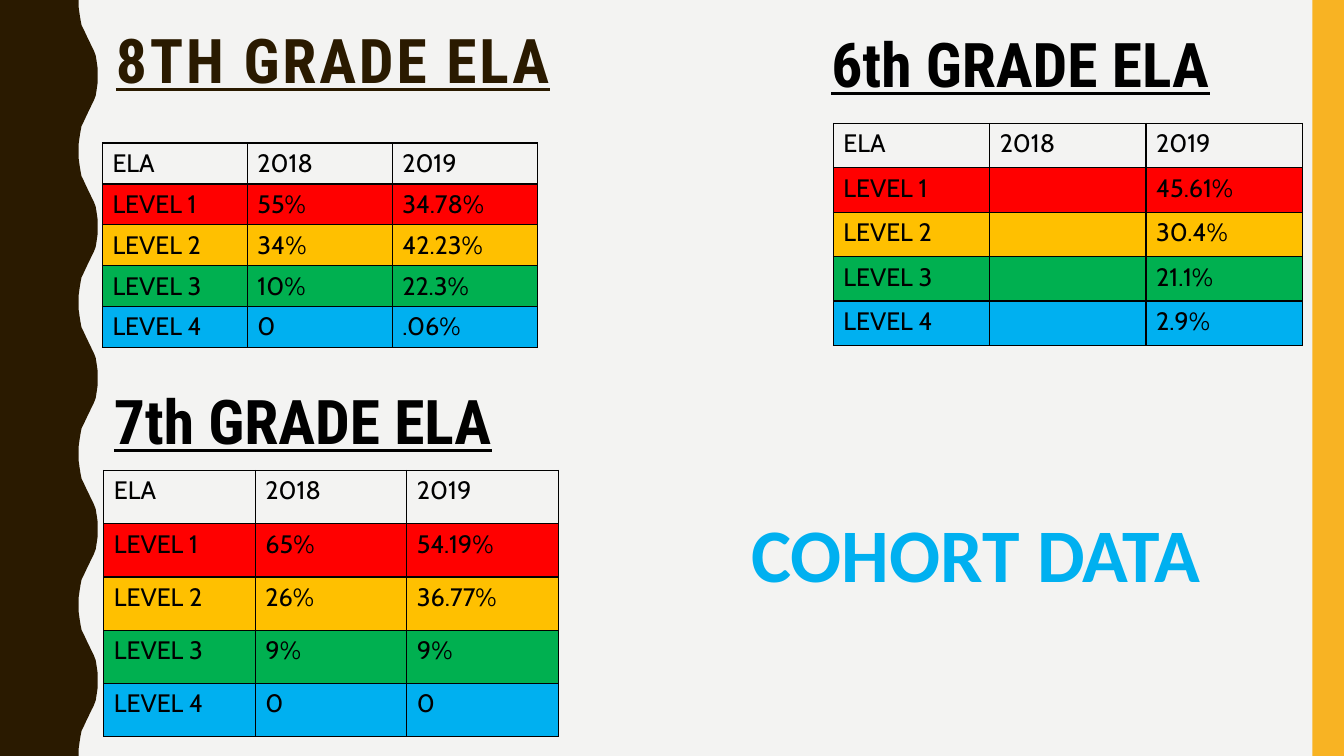
from lxml.etree import SubElement
from pptx import Presentation
from pptx.dml.color import RGBColor
from pptx.enum.shapes import MSO_SHAPE as Shape
from pptx.enum.text import MSO_ANCHOR as Anchor, MSO_AUTO_SIZE as AutoSize, PP_ALIGN as Align
from pptx.oxml.ns import qn
from pptx.util import Pt

PAPER = RGBColor(0xF3, 0xF3, 0xF2)
BROWN = RGBColor(0x2A, 0x1A, 0x00)
GOLD = RGBColor(0xF8, 0xB3, 0x23)
BLACK = RGBColor(0x00, 0x00, 0x00)
RED = RGBColor(0xFF, 0x00, 0x00)
AMBER = RGBColor(0xFF, 0xC0, 0x00)
GREEN = RGBColor(0x00, 0xB0, 0x50)
BLUE = RGBColor(0x00, 0xB0, 0xF0)

LEVEL_COLORS = [RED, AMBER, GREEN, BLUE]
HEADING_FONT = "Roboto Condensed"
WAVE_PERIOD = 108
HALF_WAVE = [(56.2, 0), (56.2, 5), (56.9, 10), (57.6, 14.4), (58.3, 18),
             (59.8, 21), (61.2, 24), (62.6, 27), (64.1, 30), (65.5, 33),
             (67, 36), (68.4, 39.6), (69.1, 44), (69.8, 49), (69.8, 54)]


def points(box):
    """Turn a box of numbers into lengths in points."""
    return [Pt(value) for value in box]


def paint(shape, color):
    """Give a shape a plain fill without outline or shadow."""
    shape.shadow.inherit = False
    shape.fill.solid()
    shape.fill.fore_color.rgb = color
    shape.line.fill.background()


def add_wavy_edge(slide, box):
    """Draw the dark band whose right side repeats one wave down the box."""
    left, top, width, height = box
    falling = [(x, WAVE_PERIOD - y) for x, y in reversed(HALF_WAVE[1:-1])]
    wave = HALF_WAVE + falling
    crest = HALF_WAVE[-1][0]
    outline = [(left + x * width / crest, top + period * WAVE_PERIOD + y)
               for period in range(round(height / WAVE_PERIOD)) for x, y in wave]
    outline += [(left + HALF_WAVE[0][0] * width / crest, top + height), (left, top + height)]
    builder = slide.shapes.build_freeform(Pt(left), Pt(top))
    builder.add_line_segments([(Pt(x), Pt(y)) for x, y in outline])
    paint(builder.convert_to_shape(), BROWN)


def add_side_bar(slide, box):
    """Draw the gold bar that fills the box."""
    paint(slide.shapes.add_shape(Shape.RECTANGLE, *points(box)), GOLD)


def write_line(frame, text, font_name, size, color, underline=False):
    """Write one bold line at the top of a text frame."""
    frame.word_wrap = True
    frame.auto_size = AutoSize.NONE
    frame.vertical_anchor = Anchor.TOP
    frame.text = text
    font = frame.paragraphs[0].runs[0].font
    font.name, font.size, font.bold = font_name, Pt(size), True
    font.underline = underline
    font.color.rgb = color


def add_title(slide, box, text):
    """Place the spaced title in the title placeholder."""
    title = slide.shapes.title
    title.left, title.top, title.width, title.height = points(box)
    write_line(title.text_frame, text, HEADING_FONT, 44, BROWN, True)
    heading = title.text_frame.paragraphs[0]
    heading.alignment = Align.LEFT
    heading.line_spacing = 0.9
    heading.runs[0].font._element.set("spc", "200")


def add_grade_heading(slide, box, text):
    """Place an underlined grade heading."""
    heading = slide.shapes.add_textbox(*points(box))
    write_line(heading.text_frame, text, HEADING_FONT, 44, BLACK, True)


def add_cohort_label(slide, box, text):
    """Place the large centred label."""
    label = slide.shapes.add_textbox(*points(box))
    write_line(label.text_frame, text, "Calibri", 54, BLUE)
    label.text_frame.paragraphs[0].alignment = Align.CENTER


def add_borders(cell):
    """Outline a cell with thin black lines."""
    properties = cell._tc.get_or_add_tcPr()
    for side in ("a:lnL", "a:lnR", "a:lnT", "a:lnB"):
        border = SubElement(properties, qn(side), w=str(Pt(1)))
        fill = SubElement(border, qn("a:solidFill"))
        SubElement(fill, qn("a:srgbClr"), val=str(BLACK))


def add_level_table(slide, box, scores):
    """Fill the box with a table of scores by level and year."""
    rows = [("ELA", "2018", "2019")]
    rows += [(f"LEVEL {level}", *pair) for level, pair in enumerate(scores, 1)]
    table = slide.shapes.add_table(len(rows), len(rows[0]), *points(box)).table
    table.first_row = table.horz_banding = False
    for column in table.columns:
        column.width = Pt(box[2] / len(rows[0]))
    for row in table.rows:
        row.height = Pt(box[3] / len(rows))
    for row_index, row in enumerate(rows):
        for column_index, text in enumerate(row):
            cell = table.cell(row_index, column_index)
            add_borders(cell)
            if row_index:
                cell.fill.solid()
                cell.fill.fore_color.rgb = LEVEL_COLORS[row_index - 1]
            else:
                cell.fill.background()
            cell.text = text
            font = cell.text_frame.paragraphs[0].font
            font.name, font.size = "Cabin", Pt(18)
            font.color.rgb = BLACK
            for run in cell.text_frame.paragraphs[0].runs:
                run.font.name, run.font.size = "Cabin", Pt(18)
                run.font.color.rgb = BLACK


def main():
    """Build the cohort slide and save it."""
    deck = Presentation()
    deck.slide_width, deck.slide_height = Pt(960), Pt(540)
    slide = deck.slides.add_slide(deck.slide_layouts[5])
    slide.background.fill.solid()
    slide.background.fill.fore_color.rgb = PAPER

    add_wavy_edge(slide, (0, 0, 69.8, 540))
    add_side_bar(slide, (937.5, 0, 22.5, 540))
    add_title(slide, (75.6, 18, 828, 104.4), "8TH GRADE ELA")
    add_level_table(slide, (73.2, 102.2, 310.5, 146),
                    [("55%", "34.78%"), ("34%", "42.23%"), ("10%", "22.3%"), ("0", ".06%")])
    add_level_table(slide, (74.2, 336, 324.6, 190.4),
                    [("65%", "54.19%"), ("26%", "36.77%"), ("9%", "9%"), ("0", "0")])
    add_grade_heading(slide, (74.2, 270, 344.9, 104.4), "7th GRADE ELA")
    add_level_table(slide, (595.3, 88.2, 335, 158.5),
                    [("", "45.61%"), ("", "30.4%"), ("", "21.1%"), ("", "2.9%")])
    add_grade_heading(slide, (586.8, 15.1, 480.2, 108.7), "6th GRADE ELA")
    add_cohort_label(slide, (478.1, 358.6, 437.8, 72.7), "COHORT DATA")
    deck.save("out.pptx")


if __name__ == "__main__":
    main()
